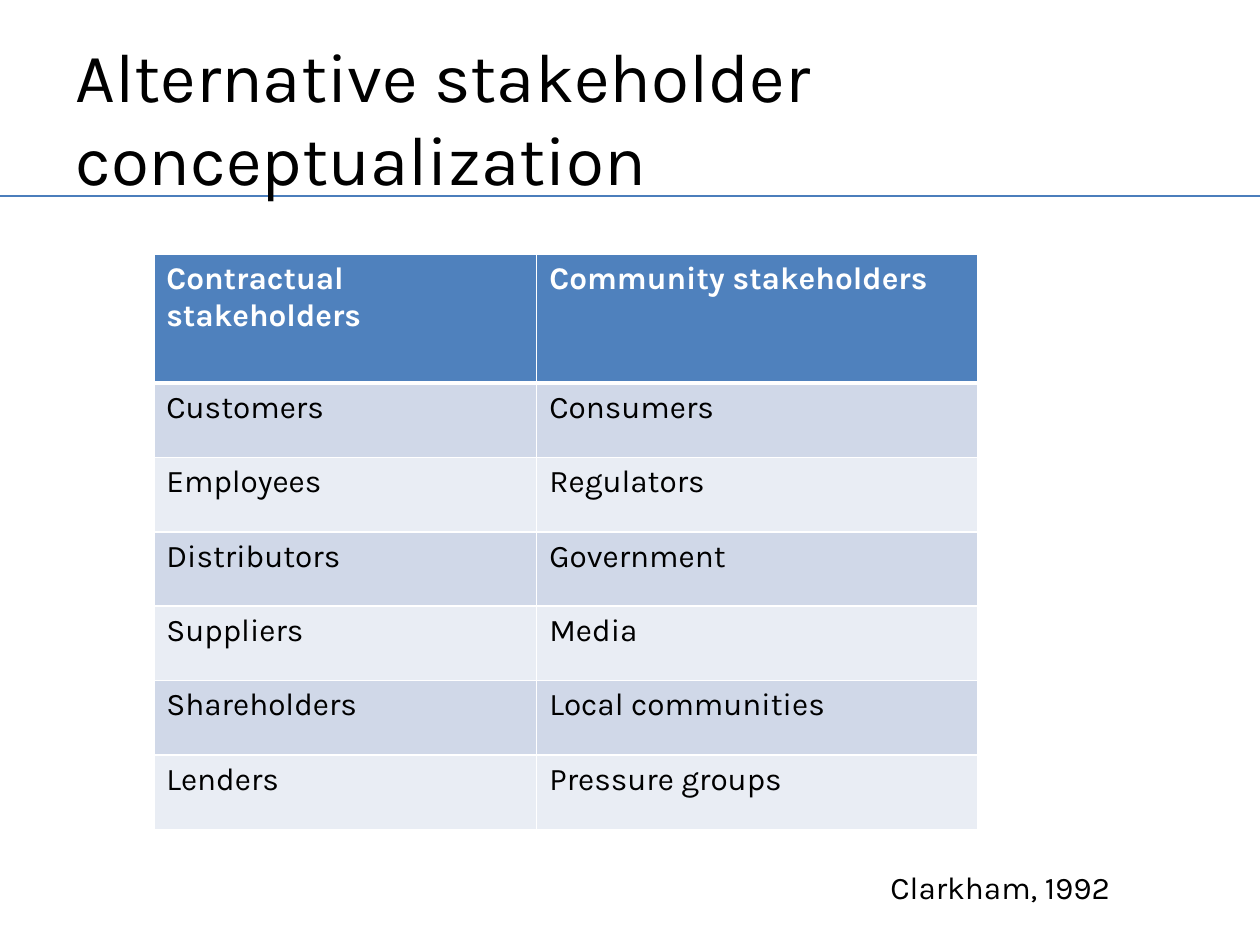
from dataclasses import dataclass

from lxml import etree
from pptx import Presentation
from pptx.dml.color import RGBColor
from pptx.enum.shapes import MSO_CONNECTOR
from pptx.enum.text import MSO_ANCHOR
from pptx.oxml.ns import qn
from pptx.util import Cm, Pt

STRAIGHT = MSO_CONNECTOR.STRAIGHT
TOP, MIDDLE = MSO_ANCHOR.TOP, MSO_ANCHOR.MIDDLE
FONT = "Karla"
BLACK = RGBColor(0x00, 0x00, 0x00)
WHITE = RGBColor(0xFF, 0xFF, 0xFF)
RULE_BLUE = RGBColor(0x4B, 0x7E, 0xBC)
HEADER_BLUE = RGBColor(0x4F, 0x81, 0xBD)
BANDS = (RGBColor(0xE9, 0xED, 0xF4), RGBColor(0xD0, 0xD8, 0xE8))
SIDES = ("a:lnL", "a:lnR", "a:lnT", "a:lnB")
COL_WIDTHS = (Cm(7.72), Cm(8.89))
HEADER_HEIGHT, ROW_HEIGHT = Cm(2.59), Cm(1.5)


@dataclass(frozen=True)
class Label:
    text: str
    left: Cm
    top: Cm
    width: Cm
    height: Cm
    size: float
    anchor: MSO_ANCHOR = TOP


@dataclass(frozen=True)
class StakeholderRow:
    contractual: str
    community: str


LABELS = (
    Label("Alternative stakeholder conceptualization",
          Cm(1.27), Cm(0.76), Cm(22.86), Cm(3.18), 39.6, MIDDLE),
    Label("Clarkham, 1992", Cm(17.7), Cm(17.37), Cm(5.79), Cm(1.02), 18),
)
ROWS = (
    StakeholderRow("Contractual stakeholders", "Community stakeholders"),
    StakeholderRow("Customers", "Consumers"),
    StakeholderRow("Employees", "Regulators"),
    StakeholderRow("Distributors", "Government"),
    StakeholderRow("Suppliers", "Media"),
    StakeholderRow("Shareholders", "Local communities"),
    StakeholderRow("Lenders", "Pressure groups"),
)


def set_text(tf, text: str, size: float, color: RGBColor, bold: bool = False) -> None:
    """Write one paragraph in the slide font."""
    p = tf.paragraphs[0]
    p.text = text
    p.font.name, p.font.size, p.font.bold = FONT, Pt(size), bold
    p.font.color.rgb = color


def add_label(s, label: Label) -> None:
    """Add a wrapping text box."""
    sp = s.shapes.add_textbox(label.left, label.top, label.width, label.height)
    tf = sp.text_frame
    tf.word_wrap = True
    tf.vertical_anchor = label.anchor
    set_text(tf, label.text, label.size, BLACK)


def add_rule(s, y: Cm, width: Cm) -> None:
    """Add the horizontal rule under the title."""
    line = s.shapes.add_connector(STRAIGHT, 0, y, width, y)
    line.line.color.rgb = RULE_BLUE
    line.line.width = Pt(0.75)
    etree.SubElement(line._element.spPr, qn("a:effectLst"))


def set_borders(cell, bottom: float) -> None:
    """Give a cell white borders, with its own bottom width in points."""
    tc_pr = cell._tc.get_or_add_tcPr()
    for side in SIDES:
        width = Pt(bottom if side == "a:lnB" else 1)
        ln = etree.SubElement(tc_pr, qn(side), w=str(width))
        fill = etree.SubElement(ln, qn("a:solidFill"))
        etree.SubElement(fill, qn("a:srgbClr"), val=str(WHITE))


def add_stakeholder_table(s, left: Cm, top: Cm, rows: tuple[StakeholderRow, ...]) -> None:
    """Add the banded table with its header row."""
    height = HEADER_HEIGHT + ROW_HEIGHT * (len(rows) - 1)
    table = s.shapes.add_table(
        len(rows), len(COL_WIDTHS), left, top, sum(COL_WIDTHS), height).table
    for column, width in zip(table.columns, COL_WIDTHS):
        column.width = width
    for i, row in enumerate(rows):
        header = i == 0
        table.rows[i].height = HEADER_HEIGHT if header else ROW_HEIGHT
        for j, text in enumerate((row.contractual, row.community)):
            cell = table.cell(i, j)
            set_borders(cell, 3 if header else 1)
            cell.fill.solid()
            cell.fill.fore_color.rgb = HEADER_BLUE if header else BANDS[i % 2]
            set_text(cell.text_frame, text, 18, WHITE if header else BLACK, header)


def main() -> None:
    """Build and save the slide."""
    prs = Presentation()
    prs.slide_width, prs.slide_height = Cm(25.4), Cm(19.05)
    s = prs.slides.add_slide(prs.slide_layouts[6])
    add_rule(s, Cm(3.95), prs.slide_width)
    add_stakeholder_table(s, Cm(3.1), Cm(5.13), ROWS)
    for label in LABELS:
        add_label(s, label)
    prs.save("out.pptx")


if __name__ == "__main__":
    main()
